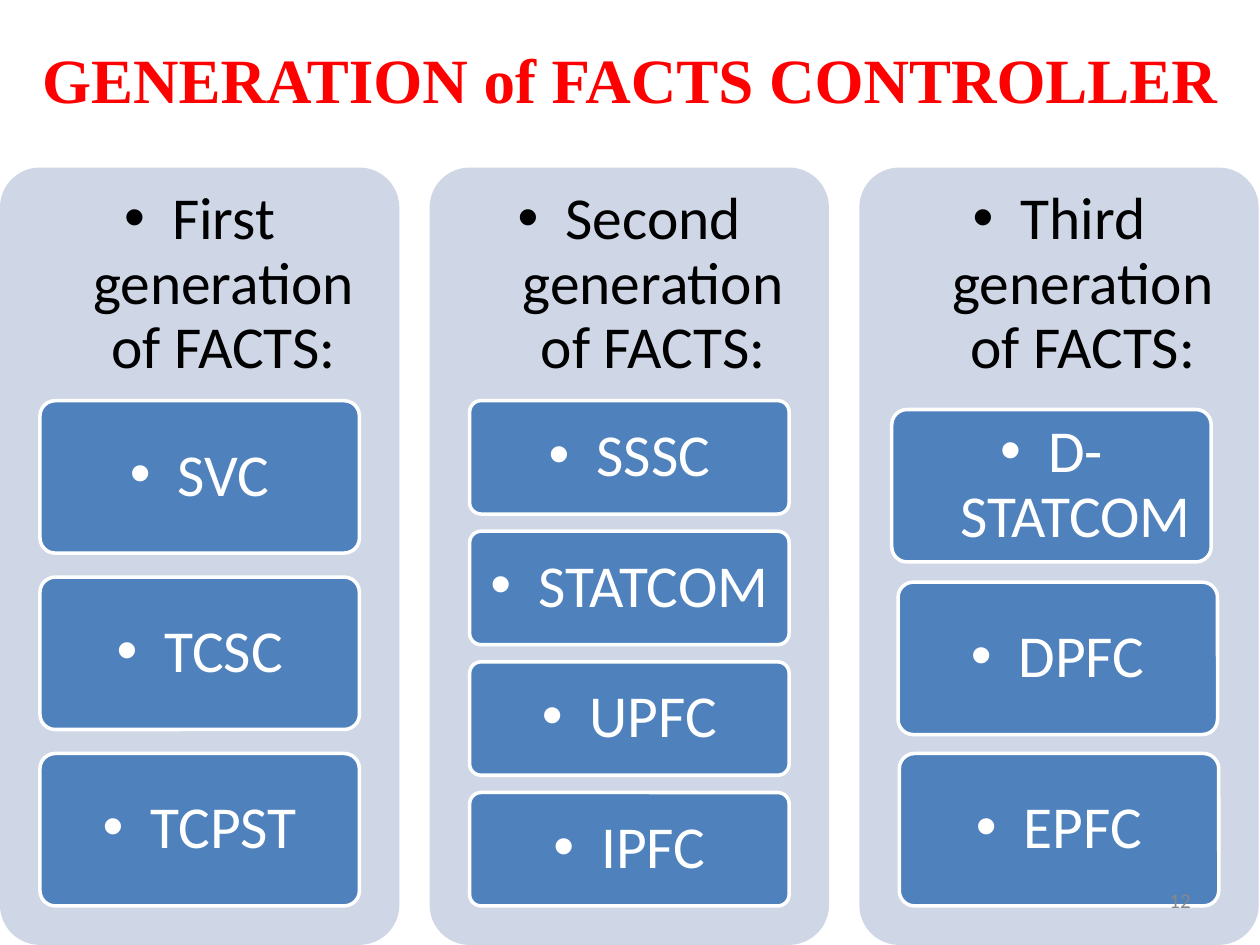
from lxml.etree import SubElement
from pptx import Presentation
from pptx.dml.color import RGBColor
from pptx.enum.shapes import MSO_SHAPE as Shape
from pptx.enum.text import MSO_ANCHOR as Anchor, MSO_AUTO_SIZE as AutoSize, PP_ALIGN as Align
from pptx.oxml.ns import qn
from pptx.util import Inches, Pt

COLUMNS = [
    ("First generation of FACTS:", ["SVC", "TCSC", "TCPST"], 1.21, {}),
    ("Second generation of FACTS:", ["SSSC", "STATCOM", "UPFC", "IPFC"], 0.9, {}),
    ("Third generation of FACTS:", ["D-STATCOM", "DPFC", "EPFC"], 1.21,
     {"D-STATCOM": (-0.06, 0.07), "DPFC": (-0.01, 0.04)}),
]
COLUMN_PITCH = 3.41
COLUMN_BOX = {"top": 1.33, "width": 3.17, "height": 6.17}
BODY_STYLE = {"name": "Calibri", "size": Pt(34)}


def color(hex_text):
    """Return the colour for a hex string."""
    return RGBColor.from_string(hex_text)


def write(shape, text, ink, style, inset=0.05, align=Align.CENTER, wrap=True):
    """Write one formatted paragraph into a shape and return it."""
    frame = shape.text_frame
    margin = Inches(inset)
    settings = {"word_wrap": wrap, "auto_size": AutoSize.NONE, "vertical_anchor": Anchor.MIDDLE,
                "margin_left": margin, "margin_right": margin,
                "margin_top": margin, "margin_bottom": margin}
    for name, value in settings.items():
        setattr(frame, name, value)
    para = frame.paragraphs[0]
    para.alignment = align
    span = para.add_run()
    span.text = text
    for name, value in style.items():
        setattr(span.font, name, value)
    span.font.color.rgb = color(ink)
    return para


def write_bullet(shape, text, ink, inset):
    """Write one centred bullet with a hanging indent."""
    para = write(shape, text, ink, BODY_STYLE, inset)
    para.line_spacing = 0.9
    para.space_before = Pt(14)
    props = para._p.get_or_add_pPr()
    props.set("marL", str(Inches(0.38)))
    props.set("indent", str(Inches(-0.38)))
    SubElement(props, qn("a:buFont")).set("typeface", "Arial")
    SubElement(props, qn("a:buChar")).set("char", "•")


def add_round_box(page, left, top, width, height, fill, outline=None):
    """Add a rounded rectangle with an optional outline."""
    box = page.shapes.add_shape(Shape.ROUNDED_RECTANGLE, Inches(left), Inches(top),
                                Inches(width), Inches(height))
    box.adjustments[0] = 0.1
    box.shadow.inherit = False
    box.fill.solid()
    box.fill.fore_color.rgb = color(fill)
    if outline:
        box.line.color.rgb = color(outline)
        box.line.width = Pt(2)
    else:
        box.line.fill.background()
    return box


def add_title(page, text, left, top, width, height):
    """Place and format the slide title."""
    title = page.shapes.title
    place = {"left": left, "top": top, "width": width, "height": height}
    for name, value in place.items():
        setattr(title, name, Inches(value))
    write(title, text, "FF0000", {"name": "Times New Roman", "size": Pt(36), "bold": True})


def add_column(page, heading, cards, card_height, nudges, left, top, width, height):
    """Add a generation panel with its heading and evenly spaced cards."""
    add_round_box(page, left, top, width, height, "CFD7E7")
    label = page.shapes.add_textbox(Inches(left), Inches(top + 0.01), Inches(width), Inches(1.84))
    write_bullet(label, heading, "000000", 0.14)
    first_top = top + 1.85
    last_top = top + height - 0.31 - card_height
    pitch = (last_top - first_top) / (len(cards) - 1)
    card_width = 0.8 * width
    for index, name in enumerate(cards):
        shift_x, shift_y = nudges.get(name, (0, 0))
        card = add_round_box(page, left + 0.1 * width + shift_x,
                             first_top + index * pitch + shift_y,
                             card_width, card_height, "4F81BD", "FFFFFF")
        write_bullet(card, name, "FFFFFF", 0.1)


def add_page_number(page, text, left, top, width, height):
    """Add the page number in the bottom corner."""
    box = page.shapes.add_textbox(Inches(left), Inches(top), Inches(width), Inches(height))
    write(box, text, "888888", {"name": "Calibri", "size": Pt(12)}, align=Align.RIGHT, wrap=False)


def main():
    """Build and save the slide."""
    deck = Presentation()
    deck.slide_width, deck.slide_height = Inches(10), Inches(7.5)
    page = deck.slides.add_slide(deck.slide_layouts.get_by_name("Title Only"))
    add_title(page, "GENERATION of FACTS CONTROLLER", 0, 0, 10, 1.25)
    for index, column in enumerate(COLUMNS):
        add_column(page, *column, left=index * COLUMN_PITCH, **COLUMN_BOX)
    add_page_number(page, "12", 9.21, 7, 0.29, 0.29)
    deck.save("out.pptx")


if __name__ == "__main__":
    main()
